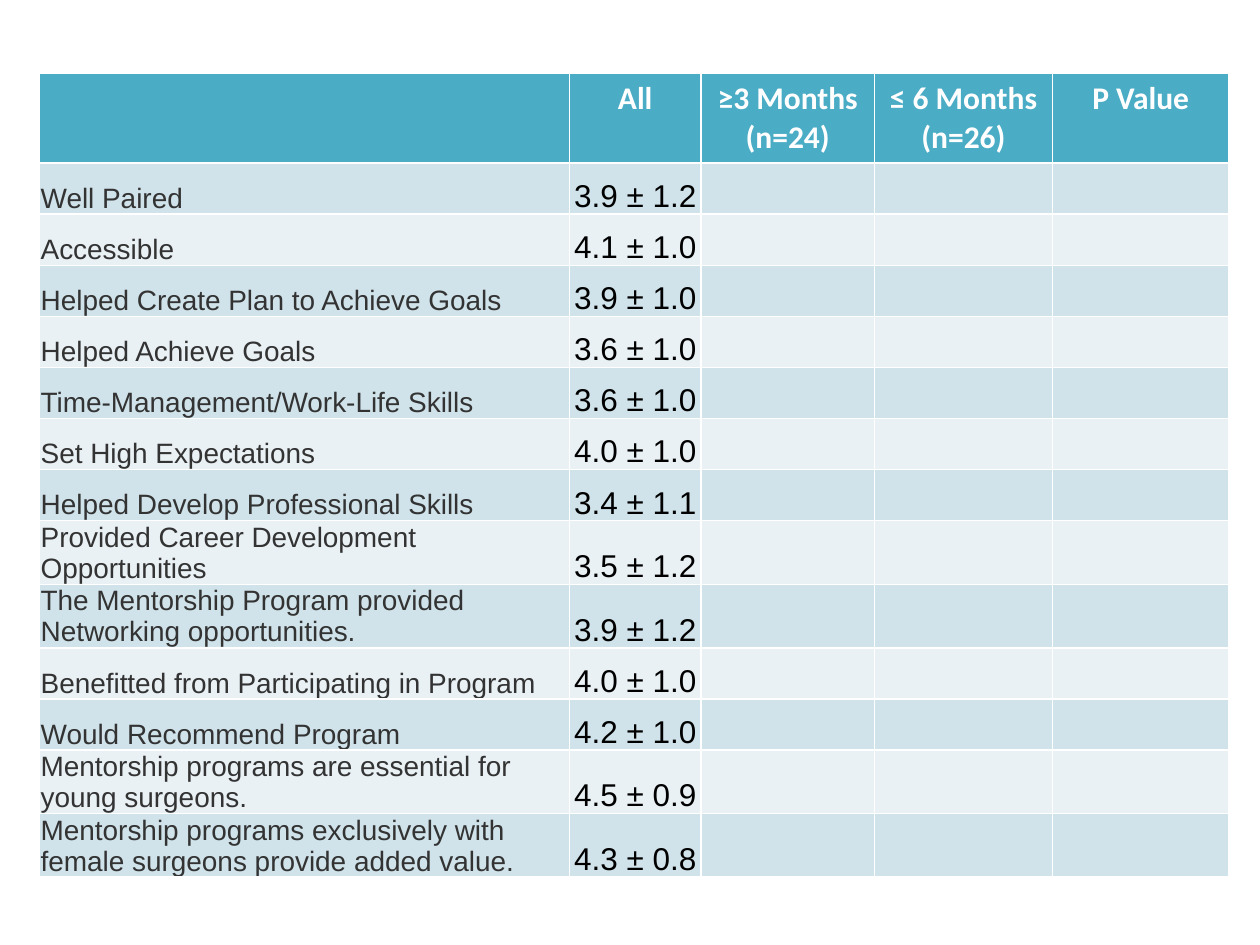
from pptx import Presentation
from pptx.dml.color import RGBColor
from pptx.enum.text import MSO_ANCHOR, PP_ALIGN
from pptx.util import Pt

CENTER, LEFT = PP_ALIGN.CENTER, PP_ALIGN.LEFT
BOTTOM = MSO_ANCHOR.BOTTOM
COLORS = {"header": "4BACC6", "odd": "D0E3EA", "even": "E9F1F5",
          "white": "FFFFFF", "label": "333333", "value": "000000"}
COL_WIDTHS = [303, 75, 99.3, 101.6, 101]
ROW_HEIGHT = 29.2
HEADERS = ["", "All", "≥3 Months\n(n=24)", "≤ 6 Months\n(n=26)", "P Value"]
RATINGS = [
    ("Well Paired", "3.9 ± 1.2"),
    ("Accessible", "4.1 ± 1.0"),
    ("Helped Create Plan to Achieve Goals", "3.9 ± 1.0"),
    ("Helped Achieve Goals", "3.6 ± 1.0"),
    ("Time-Management/Work-Life Skills", "3.6 ± 1.0"),
    ("Set High Expectations", "4.0 ± 1.0"),
    ("Helped Develop Professional Skills", "3.4 ± 1.1"),
    ("Provided Career Development Opportunities", "3.5 ± 1.2"),
    ("The Mentorship Program provided Networking opportunities.", "3.9 ± 1.2"),
    ("Benefitted from Participating in Program", "4.0 ± 1.0"),
    ("Would Recommend Program", "4.2 ± 1.0"),
    ("Mentorship programs are essential for young surgeons.", "4.5 ± 0.9"),
    ("Mentorship programs exclusively with female surgeons provide added value.", "4.3 ± 0.8"),
]


def fill_cell(cell, color):
    cell.fill.solid()
    cell.fill.fore_color.rgb = RGBColor.from_string(COLORS[color])


def write_cell(cell, text, font, size, color, align, bold=False):
    cell.text_frame.text = text
    for p in cell.text_frame.paragraphs:
        p.alignment = align
        for r in p.runs:
            r.font.name = font
            r.font.size = Pt(size)
            r.font.bold = bold
            r.font.color.rgb = RGBColor.from_string(COLORS[color])


prs = Presentation()
prs.slide_width, prs.slide_height = Pt(720), Pt(540)
s = prs.slides.add_slide(prs.slide_layouts[6])

n_rows = len(RATINGS) + 1
table = s.shapes.add_table(n_rows, len(COL_WIDTHS), Pt(22.5), Pt(42),
                           Pt(sum(COL_WIDTHS)), Pt(n_rows * ROW_HEIGHT)).table
for col, width in zip(table.columns, COL_WIDTHS):
    col.width = Pt(width)
for row in table.rows:
    row.height = Pt(ROW_HEIGHT)

for cell, text in zip(table.rows[0].cells, HEADERS):
    fill_cell(cell, "header")
    if text:
        write_cell(cell, text, "Calibri", 18, "white", CENTER, bold=True)

for i, (label, value) in enumerate(RATINGS, start=1):
    for cell in table.rows[i].cells:
        fill_cell(cell, "odd" if i % 2 else "even")
    label_cell, value_cell = table.cell(i, 0), table.cell(i, 1)
    write_cell(label_cell, label, "Arial", 16, "label", LEFT)
    write_cell(value_cell, value, "Arial", 18, "value", CENTER)
    for cell in (label_cell, value_cell):
        cell.vertical_anchor = BOTTOM
        cell.margin_left = cell.margin_right = cell.margin_top = Pt(0.75)
        cell.margin_bottom = Pt(0)

prs.save("out.pptx")
